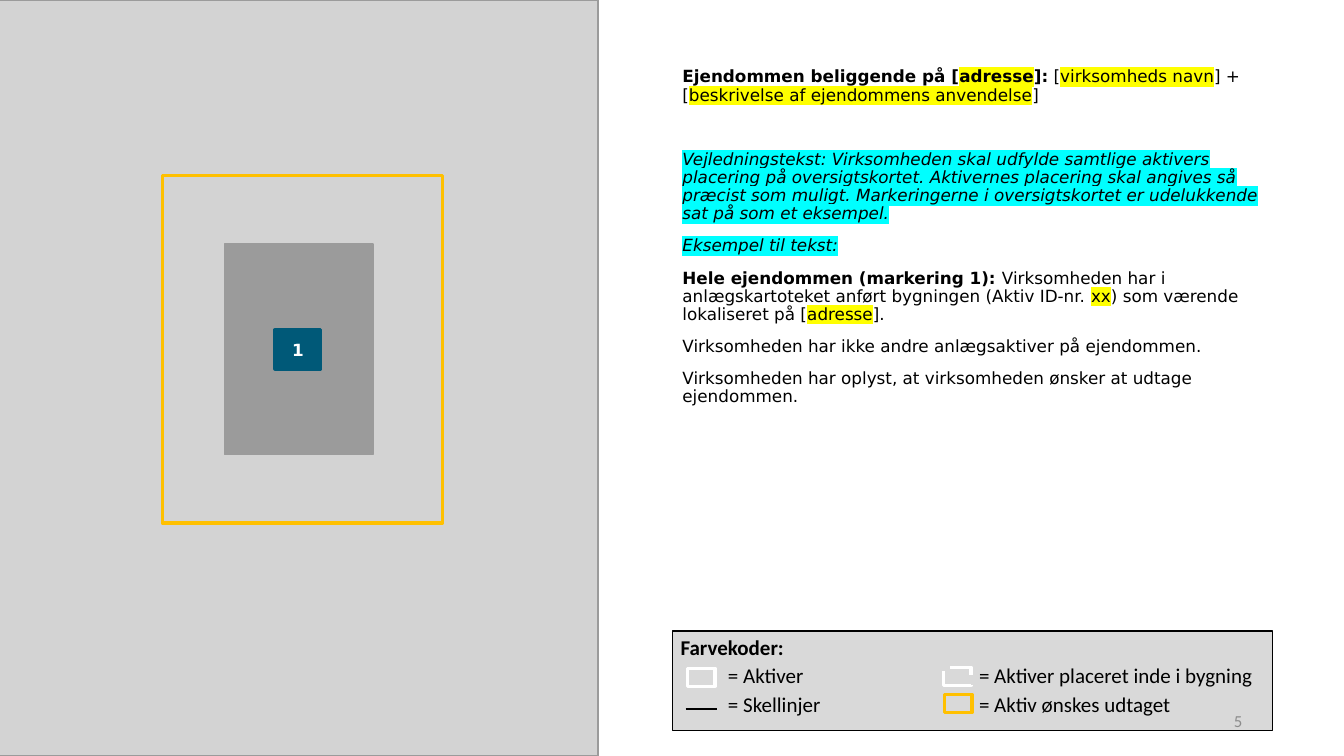
import pptx
import pptx.util
import pptx.dml.color
import pptx.enum.dml
import pptx.enum.shapes
import pptx.enum.text
import pptx.oxml
import pptx.oxml.ns
from lxml import etree

Inches, Pt = pptx.util.Inches, pptx.util.Pt
RGBColor = pptx.dml.color.RGBColor
ALIGN = pptx.enum.text.PP_ALIGN
ANCHOR = pptx.enum.text.MSO_ANCHOR

BLACK = RGBColor(0x00, 0x00, 0x00)
WHITE = RGBColor(0xFF, 0xFF, 0xFF)
MAP_GREY = RGBColor(0xD3, 0xD3, 0xD3)
BUILDING_GREY = RGBColor(0x9B, 0x9B, 0x9B)
LEGEND_GREY = RGBColor(0xD9, 0xD9, 0xD9)
NUMBER_GREY = RGBColor(0x8C, 0x8C, 0x8C)
GOLD = RGBColor(0xFF, 0xC0, 0x00)
PETROL = RGBColor(0x00, 0x59, 0x78)
YELLOW = RGBColor(0xFF, 0xFF, 0x00)
CYAN = RGBColor(0x00, 0xFF, 0xFF)

BODY_FONT = {"name": "DejaVu Sans", "size": Pt(12)}
LEGEND_FONT = {"name": "Calibri", "size": Pt(15)}
BOLD = {"bold": True}
FIELD = {"highlight": YELLOW}
GUIDE = {"italic": True, "highlight": CYAN}

# Each paragraph: space before in points, then its runs
DESCRIPTION = [
    (10, [("Ejendommen beliggende på [", BOLD), ("adresse", BOLD | FIELD), ("]:", BOLD),
          (" [", {}), ("virksomheds navn", FIELD), ("] + [", {}),
          ("beskrivelse af ejendommens anvendelse", FIELD), ("]", {})]),
    (33, [("Vejledningstekst: Virksomheden skal udfylde samtlige aktivers placering på "
           "oversigtskortet. Aktivernes placering skal angives så præcist som muligt. "
           "Markeringerne i oversigtskortet er udelukkende sat på som et eksempel.", GUIDE)]),
    (10, [("Eksempel til tekst:", GUIDE)]),
    (10, [("Hele ejendommen (markering 1): ", BOLD),
          ("Virksomheden har i anlægskartoteket anført bygningen (Aktiv ID-nr. ", {}),
          ("xx", FIELD), (") som værende lokaliseret på [", {}),
          ("adresse", FIELD), ("].", {})]),
    (10, [("Virksomheden har ikke andre anlægsaktiver på ejendommen.", {})]),
    (10, [("Virksomheden har oplyst, at virksomheden ønsker at udtage ejendommen.", {})]),
]
LEGEND = [
    (3, [("Farvekoder:", BOLD)]),
    (6, [("\t= Aktiver\t= Aktiver placeret inde i bygning", {})]),
    (6, [("\t= Skellinjer\t= Aktiv ønskes udtaget", {})]),
]
LEGEND_TABS = [0.47, 2.96]


def set_attributes(target, values):
    for name, value in values.items():
        setattr(target, name, value)


def add_rectangle(slide, box, fill, line, width, dash=None):
    rectangle = slide.shapes.add_shape(
        pptx.enum.shapes.MSO_SHAPE.RECTANGLE, *map(Inches, box))
    rectangle.shadow.inherit = False
    if fill is None:
        rectangle.fill.background()
    else:
        rectangle.fill.solid()
        rectangle.fill.fore_color.rgb = fill
    rectangle.line.color.rgb = line
    set_attributes(rectangle.line, {"width": Pt(width), "dash_style": dash})
    return rectangle


def add_run(paragraph, text, font, color, style):
    run = paragraph.add_run()
    run.text = text
    style = dict(style)
    highlight = style.pop("highlight", None)
    set_attributes(run.font, font | style)
    run.font.color.rgb = color
    if highlight is not None:
        mark = pptx.oxml.parse_xml(
            f'<a:highlight {pptx.oxml.ns.nsdecls("a")}><a:srgbClr val="{highlight}"/></a:highlight>')
        run.font._element.find(pptx.oxml.ns.qn("a:solidFill")).addnext(mark)


def write_text(shape, paragraphs, font, color=BLACK, inset=None, anchor=ANCHOR.TOP,
               align=ALIGN.LEFT, spacing=1.0, tabs=()):
    frame = shape.text_frame
    set_attributes(frame, {"word_wrap": True, "vertical_anchor": anchor})
    if inset is not None:
        set_attributes(frame, {f"margin_{side}": Inches(inset)
                               for side in ("left", "top", "right", "bottom")})
    for index, (before, runs) in enumerate(paragraphs):
        paragraph = frame.add_paragraph() if index else frame.paragraphs[0]
        set_attributes(paragraph, {"alignment": align, "line_spacing": spacing,
                                   "space_before": Pt(before)})
        if tabs:
            stops = etree.SubElement(paragraph._p.get_or_add_pPr(), pptx.oxml.ns.qn("a:tabLst"))
            for stop in tabs:
                etree.SubElement(stops, pptx.oxml.ns.qn("a:tab"),
                                 pos=str(Inches(stop)), algn="l")
        for text, style in runs:
            add_run(paragraph, text, font, color, style)


def add_text(slide, box, paragraphs, font, **options):
    write_text(slide.shapes.add_textbox(*map(Inches, box)), paragraphs, font, **options)


def add_boundary_line(slide, left, right, y):
    boundary = slide.shapes.add_connector(
        pptx.enum.shapes.MSO_CONNECTOR.STRAIGHT, *map(Inches, (left, y, right, y)))
    boundary.line.color.rgb = BLACK
    boundary.line.width = Pt(1.5)
    etree.SubElement(boundary._element.spPr, pptx.oxml.ns.qn("a:effectLst"))


def main():
    presentation = pptx.Presentation()
    set_attributes(presentation, {"slide_width": Inches(13.33), "slide_height": Inches(7.5)})
    slide = presentation.slides.add_slide(presentation.slide_layouts[6])

    # Map area and description
    add_rectangle(slide, (-0.02, 0, 5.95, 7.5), MAP_GREY, BUILDING_GREY, 1)
    add_text(slide, (6.67, 0.63, 5.95, 5.06), DESCRIPTION, BODY_FONT, spacing=0.9)

    # Colour legend with its symbols
    legend = add_rectangle(slide, (6.67, 6.26, 5.95, 0.99), LEGEND_GREY, BLACK, 0.75)
    write_text(legend, LEGEND, LEGEND_FONT, inset=0.08, spacing=0.8, tabs=LEGEND_TABS)
    dashed = pptx.enum.dml.MSO_LINE.LONG_DASH
    for left, top, color, dash in [(6.82, 6.63, WHITE, None), (9.37, 6.89, GOLD, None),
                                   (9.36, 6.62, WHITE, dashed)]:
        add_rectangle(slide, (left, top, 0.27, 0.18), None, color, 2.5, dash)
    add_boundary_line(slide, 6.8, 7.11, 7.03)

    # Slide number
    add_text(slide, (9.42, 6.95, 3, 0.4), [(0, [("5", {})])],
             {"name": "Calibri", "size": Pt(12)}, color=NUMBER_GREY,
             anchor=ANCHOR.MIDDLE, align=ALIGN.RIGHT)

    # Property outline, building and marker 1
    add_rectangle(slide, (1.61, 1.74, 2.78, 3.45), None, GOLD, 2.5)
    add_rectangle(slide, (2.23, 2.42, 1.47, 2.09), BUILDING_GREY, BUILDING_GREY, 1)
    marker = add_rectangle(slide, (2.73, 3.27, 0.45, 0.39), PETROL, PETROL, 2.5)
    write_text(marker, [(0, [("1", BOLD)])], BODY_FONT, color=WHITE, inset=0,
               anchor=ANCHOR.MIDDLE, align=ALIGN.CENTER)

    presentation.save("out.pptx")


if __name__ == "__main__":
    main()
